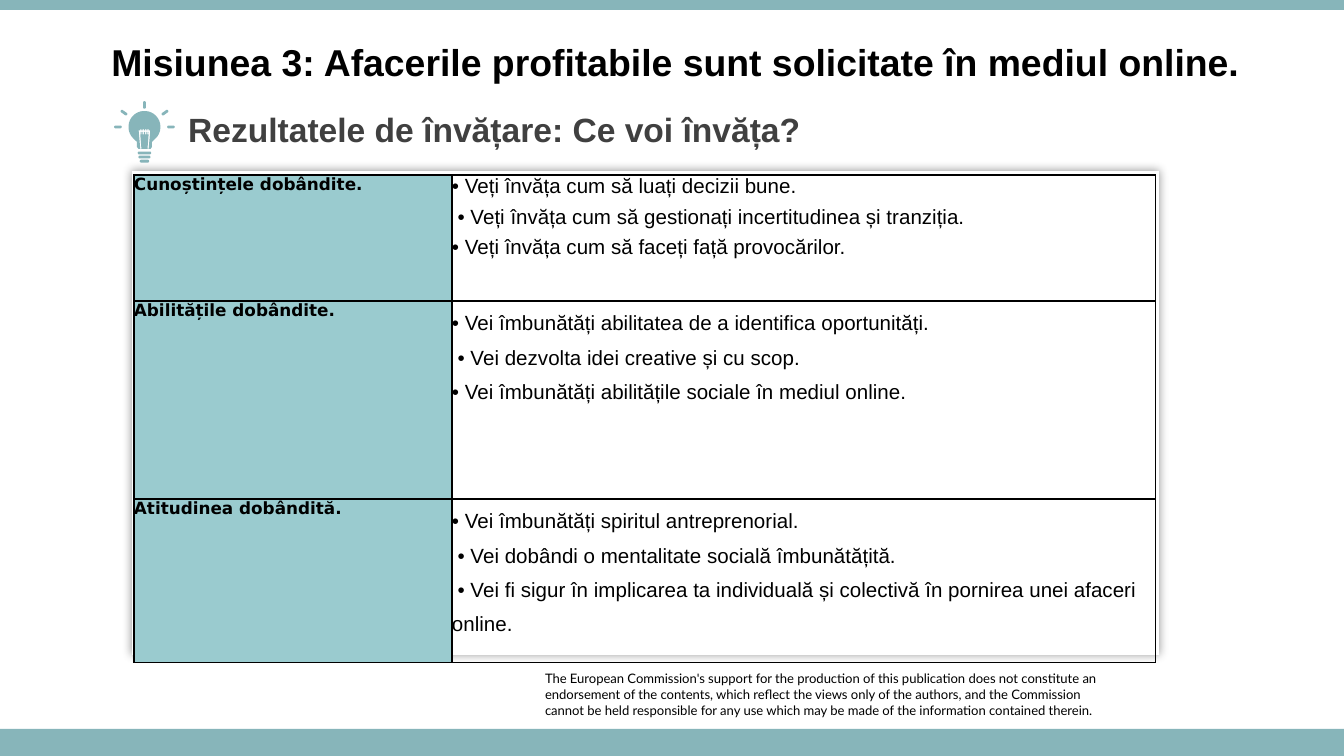
from math import cos, radians, sin

from lxml.etree import SubElement
from pptx import Presentation
from pptx.dml.color import RGBColor
from pptx.enum.shapes import MSO_SHAPE
from pptx.enum.text import MSO_ANCHOR, MSO_AUTO_SIZE, PP_ALIGN
from pptx.oxml.ns import qn
from pptx.util import Pt

PX = 914400 / 134.4
WIDTH, HEIGHT = 1344, 756

BLACK = RGBColor(0x00, 0x00, 0x00)
GREY = RGBColor(0x40, 0x40, 0x40)
WHITE = RGBColor(0xFF, 0xFF, 0xFF)
TEAL = RGBColor(0x87, 0xB5, 0xBA)
LIGHT_TEAL = RGBColor(0x9A, 0xCB, 0xCF)

TITLE = "Misiunea 3: Afacerile profitabile sunt solicitate în mediul online."
HEADING = "Rezultatele de învățare: Ce voi învăța?"
DISCLAIMER = [
    "The European Commission's support for the production of this publication "
    "does not constitute an endorsement of the contents, which reflect the "
    "views only of the authors, and the Commission",
    "cannot be held responsible for any use which may be made of the "
    "information contained therein.",
]

# label, row height, line spacing, points after each line, outcomes
OUTCOMES = [
    ("Cunoștințele dobândite.", 126, 1, 4.2, [
        "• Veți învăța cum să luați decizii bune.",
        " • Veți învăța cum să gestionați incertitudinea și tranziția.",
        "• Veți învăța cum să faceți față provocărilor."]),
    ("Abilitățile dobândite.", 198, 1.5, 0, [
        "• Vei îmbunătăți abilitatea de a identifica oportunități.",
        " • Vei dezvolta idei creative și cu scop.",
        "• Vei îmbunătăți abilitățile sociale în mediul online."]),
    ("Atitudinea dobândită.", 164, 1.5, 0, [
        "• Vei îmbunătăți spiritul antreprenorial.",
        " • Vei dobândi o mentalitate socială îmbunătățită.",
        " • Vei fi sigur în implicarea ta individuală și colectivă în "
        "pornirea unei afaceri online."]),
]
COLUMN_WIDTHS = (318, 704)


def emu(*lengths):
    return [round(length * PX) for length in lengths]


def write(frame, lines, font, size, color, bold=False, spacing=1, after=0):
    frame.word_wrap = True
    for index, line in enumerate(lines):
        para = frame.add_paragraph() if index else frame.paragraphs[0]
        para.text = line
        para.line_spacing = spacing
        para.space_after = Pt(after)
        para.font.name, para.font.size = font, Pt(size)
        para.font.bold, para.font.color.rgb = bold, color


def add_panel(page, box, color):
    panel = page.shapes.add_shape(MSO_SHAPE.RECTANGLE, *emu(*box))
    panel.fill.solid()
    panel.fill.fore_color.rgb = color
    panel.line.fill.background()
    panel.shadow.inherit = False
    return panel


def add_glow_panel(page, box):
    panel = add_panel(page, box, WHITE)
    effects = panel._element.spPr.find(qn("a:effectLst"))
    shadow = SubElement(effects, qn("a:outerShdw"), blurRad=str(Pt(5)),
                        dist="0", dir="0", algn="ctr", rotWithShape="0")
    color = SubElement(shadow, qn("a:srgbClr"), val=str(BLACK))
    SubElement(color, qn("a:alpha"), val="40000")


def arc(x, y, radius, start, end, step=10):
    return [(x + radius * cos(radians(angle)), y + radius * sin(radians(angle)))
            for angle in range(start, end + 1, step)]


def capsule(x, y, length, angle, radius=14):
    reach = length / 2 - radius
    dx, dy = reach * cos(radians(angle)), reach * sin(radians(angle))
    return (arc(x + dx, y + dy, radius, angle - 90, angle + 90)
            + arc(x - dx, y - dy, radius, angle + 90, angle + 270))


def filament(x, top):
    """Outline of the wire: a bar with four loops, standing on two legs."""
    loops = [x + offset for offset in (-36, -12, 12, 36)]
    upper, lower = [(x - 58, top)], [(x - 44, top + 14)]
    for loop in loops:
        upper += [(loop - 6, top), (loop - 6, top - 14),
                  (loop + 6, top - 14), (loop + 6, top)]
        lower += [(loop - 6, top + 14), (loop - 6, top + 40),
                  (loop + 6, top + 40), (loop + 6, top + 14)]
    lower.append((x + 44, top + 14))
    right_leg = [(x + 58, top), (x + 42, top + 185), (x + 30, top + 185)]
    left_leg = [(x - 30, top + 185), (x - 42, top + 185)]
    return upper + right_leg + lower[::-1] + left_leg


def add_bulb(page, box):
    """Light bulb, outlined in tenths of a px from the corner of its box."""
    left, top, width, _ = box
    x, y = width * 5, 260
    neck = [(75, 150), (75, 200), (60, 220), (-60, 220), (-75, 200), (-75, 150)]
    contours = [arc(x, y, 160, 135, 405) + [(x + dx, y + dy) for dx, dy in neck],
                filament(x, 295)]
    for angle, distance in ((0, 265), (-35, 250), (-90, 220), (-145, 250), (-180, 265)):
        contours.append(capsule(x + distance * cos(radians(angle)),
                                y + distance * sin(radians(angle)), 75, angle))
    for row, length in enumerate((134, 120, 94)):
        contours.append(capsule(x, 520 + 41 * row, length, 0))

    builder = page.shapes.build_freeform(*contours[0][0], scale=PX / 10)
    for index, contour in enumerate(contours):
        if index:
            builder.move_to(*contour[0])
        builder.add_line_segments(contour[1:], close=True)
    bulb = builder.convert_to_shape(*emu(left, top))
    bulb.fill.solid()
    bulb.fill.fore_color.rgb = TEAL
    bulb.line.fill.background()
    bulb.shadow.inherit = False


def place_title(page, box):
    title = page.shapes.title
    title.left, title.top, title.width, title.height = emu(*box)
    frame = title.text_frame
    frame.auto_size = MSO_AUTO_SIZE.NONE
    frame.vertical_anchor = MSO_ANCHOR.MIDDLE
    write(frame, [TITLE], "Arial", 20, BLACK, bold=True)
    frame.paragraphs[0].alignment = PP_ALIGN.CENTER


def add_heading(page, box):
    left, top, width, height = box
    add_bulb(page, (left, top, 61, height))
    frame = page.shapes.add_textbox(*emu(left + 61, top + 8, width - 61, 40)).text_frame
    frame.vertical_anchor = MSO_ANCHOR.MIDDLE
    write(frame, [HEADING], "Arial", 18, GREY, bold=True)


def add_disclaimer(page, box):
    frame = page.shapes.add_textbox(*emu(*box)).text_frame
    frame.margin_left = frame.margin_right = frame.margin_top = frame.margin_bottom = 0
    write(frame, DISCLAIMER, "Lato", 7, BLACK)


def format_cell(cell, fill=None):
    cell.margin_left = cell.margin_right = cell.margin_top = cell.margin_bottom = 0
    properties = cell._tc.get_or_add_tcPr()
    for side in ("lnL", "lnR", "lnT", "lnB"):
        border = SubElement(properties, qn(f"a:{side}"), w=str(Pt(0.75)))
        SubElement(SubElement(border, qn("a:solidFill")), qn("a:srgbClr"), val=str(BLACK))
    if fill is None:
        cell.fill.background()
    else:
        cell.fill.solid()
        cell.fill.fore_color.rgb = fill


def add_outcomes(page, box):
    left, top, width, height = box
    add_glow_panel(page, (left - 2, top - 4, width + 5, height - 4))
    table = page.shapes.add_table(len(OUTCOMES), 2, *emu(*box)).table
    table.first_row = table.horz_banding = False
    for column, column_width in zip(table.columns, emu(*COLUMN_WIDTHS)):
        column.width = column_width
    for row, (label, row_height, spacing, after, lines) in zip(table.rows, OUTCOMES):
        row.height, = emu(row_height)
        name, details = row.cells
        format_cell(name, LIGHT_TEAL)
        write(name.text_frame, [label], "DejaVu Sans", 9, BLACK, bold=True)
        format_cell(details)
        write(details.text_frame, lines, "Arial", 11, BLACK, spacing=spacing, after=after)


def main():
    deck = Presentation()
    deck.slide_width, deck.slide_height = emu(WIDTH, HEIGHT)
    page = deck.slides.add_slide(deck.slide_layouts[5])
    add_panel(page, (0, 0, WIDTH, 10), TEAL)
    add_panel(page, (0, 729, WIDTH, 27), TEAL)
    place_title(page, (4, 19, WIDTH, 85))
    add_heading(page, (114, 101, 706, 62))
    add_outcomes(page, (134, 175, sum(COLUMN_WIDTHS), sum(row[1] for row in OUTCOMES)))
    add_disclaimer(page, (545, 671, 560, 47))
    deck.save("out.pptx")


if __name__ == "__main__":
    main()
